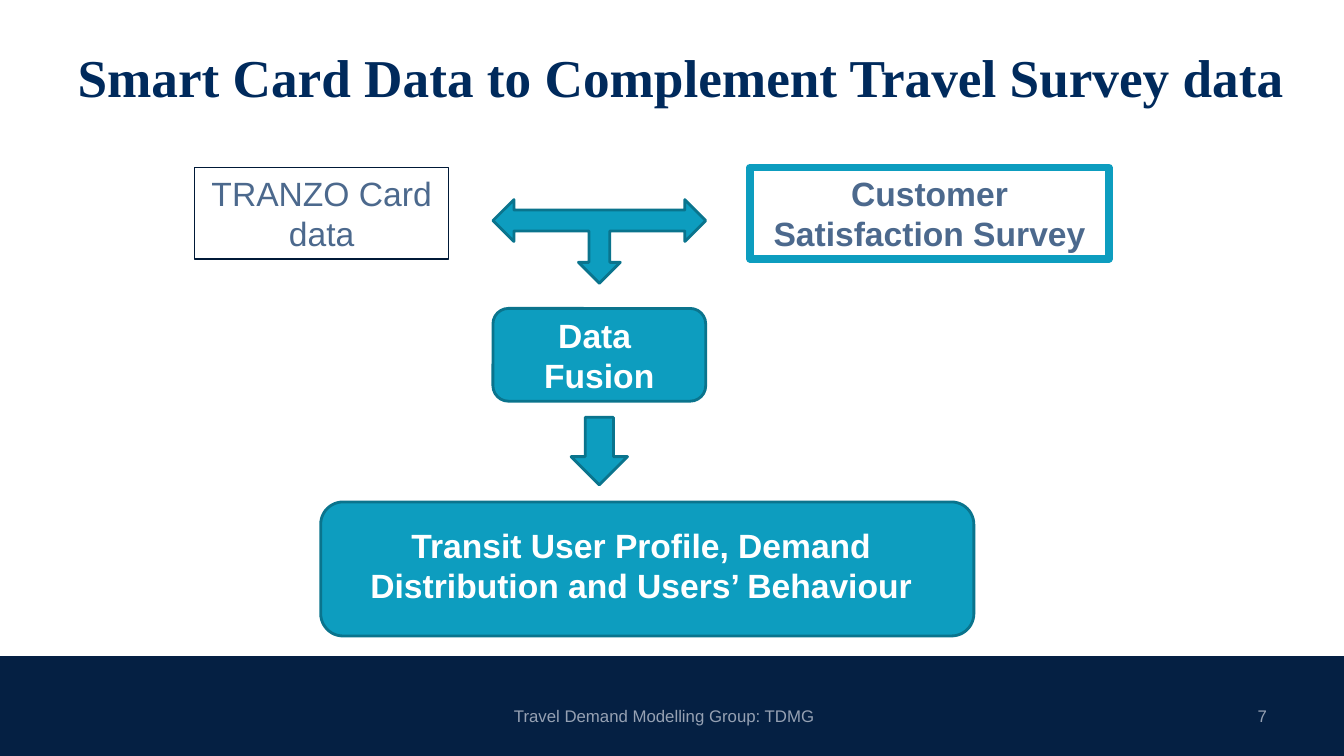
from pptx import Presentation
from pptx.dml.color import RGBColor
from pptx.enum.shapes import MSO_SHAPE
from pptx.enum.text import MSO_ANCHOR, PP_ALIGN
from pptx.util import Inches, Pt

RECT, ROUNDED = MSO_SHAPE.RECTANGLE, MSO_SHAPE.ROUNDED_RECTANGLE
DOWN_ARROW, MERGE_ARROW = MSO_SHAPE.DOWN_ARROW, MSO_SHAPE.LEFT_RIGHT_UP_ARROW
LEFT, CENTER, RIGHT = PP_ALIGN.LEFT, PP_ALIGN.CENTER, PP_ALIGN.RIGHT
MIDDLE = MSO_ANCHOR.MIDDLE

NAVY = RGBColor(0x05, 0x20, 0x43)
TITLE_BLUE = RGBColor(0x00, 0x2A, 0x5C)
TEAL = RGBColor(0x0D, 0x9D, 0xBF)
DARK_TEAL = RGBColor(0x0A, 0x74, 0x8D)
SLATE = RGBColor(0x4C, 0x69, 0x8D)
INK = RGBColor(0x00, 0x19, 0x37)
FOOTER_GREY = RGBColor(0x96, 0xA1, 0xB3)
WHITE = RGBColor(0xFF, 0xFF, 0xFF)

SLIDE_W, SLIDE_H = Inches(13.33), Inches(7.5)

# Left, top, width and height as percentages of the slide
MERGE_LEFT, MERGE_WIDTH = 36.68, 15.83
ARROW_WIDTH = 4.2
ARROW_LEFT = MERGE_LEFT + (MERGE_WIDTH - ARROW_WIDTH) / 2
SOURCE_TOP, SOURCE_HEIGHT = 22.13, 12.13
FOOTER_TOP, FOOTER_HEIGHT = 92, 5.33


def place(left, top, width, height):
    """Turn percentages of the slide into lengths."""
    return (int(SLIDE_W * left / 100), int(SLIDE_H * top / 100),
            int(SLIDE_W * width / 100), int(SLIDE_H * height / 100))


def write(shape, text, size, color, bold=False, align=CENTER, font="Arial"):
    frame = shape.text_frame
    frame.word_wrap = True
    frame.vertical_anchor = MIDDLE
    frame.text = text
    for paragraph in frame.paragraphs:
        paragraph.alignment = align
        paragraph.font.name = font
        paragraph.font.size = Pt(size)
        paragraph.font.bold = bold
        paragraph.font.color.rgb = color


def add_label(slide, area, text, size, color, **style):
    write(slide.shapes.add_textbox(*place(*area)), text, size, color, **style)


def add_block(slide, kind, area, fill=TEAL, line=DARK_TEAL, weight=2):
    """Add a preset shape; None for fill or line leaves it out."""
    block = slide.shapes.add_shape(kind, *place(*area))
    block.shadow.inherit = False
    if fill is None:
        block.fill.background()
    else:
        block.fill.solid()
        block.fill.fore_color.rgb = fill
    if line is None:
        block.line.fill.background()
    else:
        block.line.color.rgb = line
        block.line.width = Pt(weight)
    return block


def add_source(slide, left, width, text, line, weight, bold):
    """Add an outlined box for one of the two data sources."""
    area = (left, SOURCE_TOP, width, SOURCE_HEIGHT)
    source = add_block(slide, RECT, area, None, line, weight)
    write(source, text, 24, SLATE, bold=bold)


def add_footer(slide):
    add_block(slide, RECT, (0, 86.8, 100, 13.2), NAVY, None)
    add_label(slide, (29.63, FOOTER_TOP, 39.6, FOOTER_HEIGHT),
              "Travel Demand Modelling Group: TDMG", 12, FOOTER_GREY)
    add_label(slide, (87.4, FOOTER_TOP, 7.6, FOOTER_HEIGHT),
              "7", 12, FOOTER_GREY, align=RIGHT)


def add_flow(slide):
    add_source(slide, 14.48, 18.9, "TRANZO Card data", INK, 0.75, False)
    add_source(slide, 55.81, 26.7, "Customer Satisfaction Survey",
               TEAL, 5.25, True)

    merge = add_block(slide, MERGE_ARROW,
                      (MERGE_LEFT, 26.4, MERGE_WIDTH, 11.07))
    merge.rotation = 180

    fusion = add_block(slide, ROUNDED, (MERGE_LEFT, 40.8, MERGE_WIDTH, 12.27))
    write(fusion, "Data \nFusion", 24, WHITE, bold=True)

    add_block(slide, DOWN_ARROW, (ARROW_LEFT, 55.2, ARROW_WIDTH, 8.93))

    outcome = add_block(slide, ROUNDED, (23.86, 66.4, 48.6, 17.73))
    write(outcome,
          "Transit User Profile, Demand Distribution and Users’ Behaviour",
          24, WHITE, bold=True)
    outcome.text_frame.margin_right = Inches(0.22)
    outcome.text_frame.margin_bottom = Inches(0.13)


def main():
    deck = Presentation()
    deck.slide_width, deck.slide_height = SLIDE_W, SLIDE_H
    slide = deck.slides.add_slide(deck.slide_layouts[6])
    add_footer(slide)
    add_label(slide, (5.03, 4.13, 93.25, 11.87),
              "Smart Card Data to Complement Travel Survey data",
              38, TITLE_BLUE, bold=True, align=LEFT, font="Times New Roman")
    add_flow(slide)
    deck.save("out.pptx")


if __name__ == "__main__":
    main()
